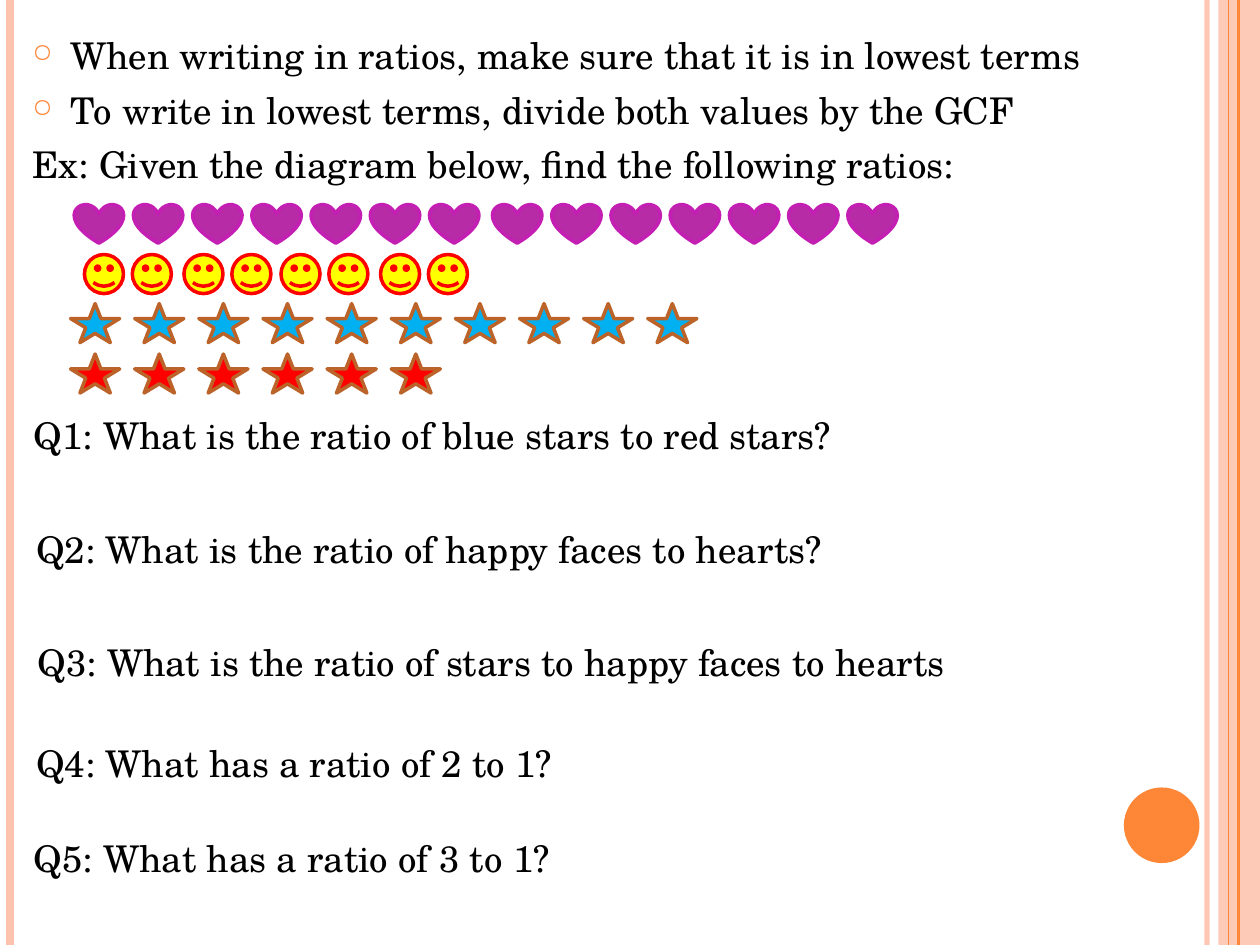
from lxml import etree
from pptx import Presentation
from pptx.dml.color import RGBColor
from pptx.enum.shapes import MSO_CONNECTOR, MSO_SHAPE as Shape
from pptx.oxml.ns import qn
from pptx.util import Inches, Pt

FONT = "TeX Gyre Schola"
ORANGE, PEACH = "FE8637", "FEC3AE"


def color(value):
    return RGBColor.from_string(value)


def add_text(para, text):
    span = para.add_run()
    span.text = text
    span.font.name = FONT
    span.font.size = Pt(21)
    span.font.color.rgb = color("000000")


deck = Presentation()
deck.slide_width, deck.slide_height = Inches(10), Inches(7.5)
page = deck.slides.add_slide(deck.slide_layouts[6])

# Side stripes: x, color, width, opacity; the band sits behind the last two
band = page.shapes.add_shape(
    Shape.RECTANGLE, Inches(9.67), Inches(0), Inches(0.33), Inches(7.5))
band.shadow.inherit = False
band.fill.solid()
band.fill.fore_color.rgb = color(PEACH)
band.line.fill.background()
band_color = band.fill._xPr.find(".//" + qn("a:srgbClr"))
etree.SubElement(band_color, qn("a:alpha"), val="87000")

for x, stripe_color, width, opacity in [
    (9.58, PEACH, 3, 93),
    (0.08, PEACH, 4.5, 100),
    (9.83, ORANGE, 1.5, 100),
    (9.75, ORANGE, 0.75, 100),
]:
    stripe = page.shapes.add_connector(
        MSO_CONNECTOR.STRAIGHT, Inches(x), Inches(0), Inches(x), Inches(7.5))
    stripe.line.color.rgb = color(stripe_color)
    stripe.line.width = Pt(width)
    properties = stripe._element.spPr
    if opacity < 100:
        stripe_fill = properties.find(".//" + qn("a:srgbClr"))
        etree.SubElement(stripe_fill, qn("a:alpha"), val=str(opacity * 1000))
    etree.SubElement(properties, qn("a:effectLst"))

# Corner circle
circle = page.shapes.add_shape(
    Shape.OVAL, Inches(8.92), Inches(6.25), Inches(0.6), Inches(0.6))
circle.shadow.inherit = False
circle.fill.solid()
circle.fill.fore_color.rgb = color(ORANGE)
circle.line.fill.background()

# Introduction: two bullets and the example line
intro = page.shapes.add_textbox(
    Inches(0.16), Inches(0.21), Inches(9.37), Inches(1.42)).text_frame
intro.word_wrap = True
for index, (text, bulleted) in enumerate([
    ("When writing in ratios, make sure that it is in lowest terms", True),
    ("To write in lowest terms, divide both values by the GCF", True),
    ("Ex: Given the diagram below, find the following ratios:", False),
]):
    para = intro.add_paragraph() if index else intro.paragraphs[0]
    if index:
        para.space_before = Pt(6)
    if bulleted:
        layout = para._p.get_or_add_pPr()
        layout.set("marL", str(Inches(0.3)))
        layout.set("indent", str(Inches(-0.3)))
        bullet_color = etree.SubElement(layout, qn("a:buClr"))
        etree.SubElement(bullet_color, qn("a:srgbClr"), val=ORANGE)
        etree.SubElement(layout, qn("a:buSzPct"), val="70000")
        etree.SubElement(layout, qn("a:buChar"), char="○")
    add_text(para, text)

# Diagram rows: kind, left edges, top, width, fill, outline
hearts = [start + 0.47 * i for start in (0.59, 3.91) for i in range(7)]
faces = [start + 0.38 * i for start in (0.67, 1.46, 2.23, 3.02) for i in range(2)]
stars = [0.56 + 0.509 * i for i in range(10)]
diagram = page.shapes.add_group_shape()
for kind, lefts, top, width, fill, outline in [
    (Shape.HEART, hearts, 1.62, 0.39, "B72BA6", "C31FB3"),
    (Shape.SMILEY_FACE, faces, 2.02, 0.31, "FFFF00", "FF0000"),
    (Shape.STAR_5_POINT, stars, 2.41, 0.39, "00B0F0", "BC6329"),
    (Shape.STAR_5_POINT, stars[:6], 2.81, 0.39, "FF0000", "BC6329"),
]:
    for left in lefts:
        symbol = diagram.shapes.add_shape(
            kind, Inches(left), Inches(top), Inches(width), Inches(0.31))
        symbol.shadow.inherit = False
        symbol.fill.solid()
        symbol.fill.fore_color.rgb = color(fill)
        symbol.line.color.rgb = color(outline)
        symbol.line.width = Pt(2)

# Questions
for left, top, text in [
    (0.17, 3.23, "Q1: What is the ratio of blue stars to red stars?"),
    (0.19, 4.13, "Q2: What is the ratio of happy faces to hearts?"),
    (0.20, 5.03, "Q3: What is the ratio of stars to happy faces to hearts"),
    (0.19, 5.83, "Q4: What has a ratio of 2 to 1?"),
    (0.17, 6.58, "Q5: What has a ratio of 3 to 1?"),
]:
    box = page.shapes.add_textbox(
        Inches(left), Inches(top), Inches(9.37), Inches(0.52))
    box.text_frame.word_wrap = True
    add_text(box.text_frame.paragraphs[0], text)

deck.save("out.pptx")
